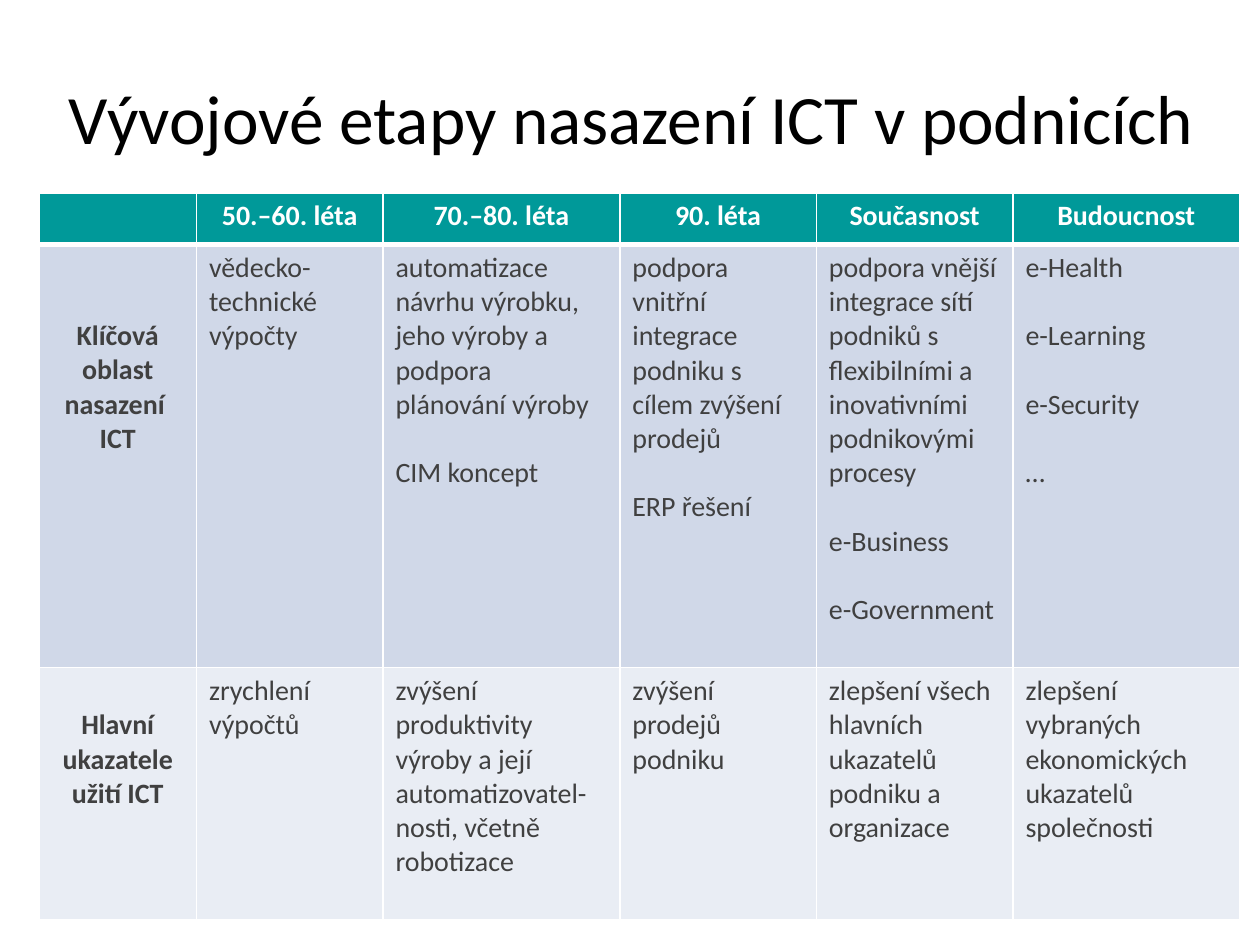
from dataclasses import dataclass

from lxml import etree
from pptx import Presentation
from pptx import util as u
from pptx.dml.color import RGBColor
from pptx.enum import text
from pptx.oxml.ns import qn


@dataclass(frozen=True)
class Theme:
    font: str = "Calibri"
    title_size: float = 39.6
    table_size: float = 16
    line_height: float = 19.5
    title_color: str = "000000"
    header_color: str = "FFFFFF"
    body_color: str = "404040"
    header_fill: str = "009999"
    row_fills: tuple = ("D0D8E8", "E9EDF4")
    border_color: str = "FFFFFF"


THEME = Theme()
SLIDE_SIZE = (10, 7.5)
TITLE_BOX = (0.35, 0.3, 9.45, 1.25)
TABLE_BOX = (0.31, 1.53, 9.53, 5.77)
COLUMN_WEIGHTS = (1.25, 1.48, 1.88, 1.56, 1.56, 1.8)
ROW_WEIGHTS = (0.41, 3.36, 2)

TITLE = "Vývojové etapy nasazení ICT v podnicích "
HEADERS = ("", "50.–60. léta", "70.–80. léta", "90. léta", "Současnost", "Budoucnost")
# Each row: lines left free above the label, label paragraphs, cells of paragraphs.
ROWS = (
    (2, ("Klíčová oblast", "nasazení \vICT"), (
        ("vědecko-technické výpočty",),
        ("automatizace návrhu výrobku, jeho výroby a podpora plánování výroby",
         "CIM koncept"),
        ("podpora vnitřní integrace podniku s cílem zvýšení prodejů", "ERP řešení"),
        ("podpora vnější integrace sítí podniků s flexibilními a inovativními "
         "podnikovými procesy", "e-Business", "e-Government"),
        ("e-Health", "e-Learning", "e-Security", "…"),
    )),
    (1, ("Hlavní ukazatele užití ICT",), (
        ("zrychlení výpočtů",),
        ("zvýšení produktivity výroby a její automatizovatel-nosti, včetně robotizace",),
        ("zvýšení prodejů podniku",),
        ("zlepšení všech hlavních ukazatelů podniku a organizace",),
        ("zlepšení vybraných ekonomických ukazatelů společnosti",),
    )),
)


def write(frame, paragraphs, size, color, bold=False, centered=False, gap=0):
    """Fill a text frame, leaving gap points between paragraphs."""
    frame.word_wrap = True
    for index, wording in enumerate(paragraphs):
        paragraph = frame.paragraphs[0] if index == 0 else frame.add_paragraph()
        paragraph.text = wording
        paragraph.alignment = text.PP_ALIGN.CENTER if centered else text.PP_ALIGN.LEFT
        if index and gap:
            paragraph.space_before = u.Pt(gap)
        font = paragraph.font
        font.name, font.size, font.bold = THEME.font, u.Pt(size), bold
        font.color.rgb = RGBColor.from_string(color)


def style_cell(cell, fill, bottom_width=1):
    properties = cell._tc.get_or_add_tcPr()
    widths = {"a:lnL": 1, "a:lnR": 1, "a:lnT": 1, "a:lnB": bottom_width}
    for side, width in widths.items():
        line = etree.SubElement(properties, qn(side), w=str(u.Pt(width)))
        solid = etree.SubElement(line, qn("a:solidFill"))
        etree.SubElement(solid, qn("a:srgbClr"), val=THEME.border_color)
    cell.fill.solid()
    cell.fill.fore_color.rgb = RGBColor.from_string(fill)


def add_title(slide, box):
    frame = slide.shapes.add_textbox(*map(u.Inches, box)).text_frame
    frame.vertical_anchor = text.MSO_ANCHOR.MIDDLE
    write(frame, [TITLE], THEME.title_size, THEME.title_color, centered=True)


def add_stage_table(slide, box):
    shape = slide.shapes.add_table(len(ROW_WEIGHTS), len(COLUMN_WEIGHTS),
                                   *map(u.Inches, box))
    table = shape.table
    for column, weight in zip(table.columns, COLUMN_WEIGHTS):
        column.width = u.Inches(box[2] * weight / sum(COLUMN_WEIGHTS))
    for row, weight in zip(table.rows, ROW_WEIGHTS):
        row.height = u.Inches(box[3] * weight / sum(ROW_WEIGHTS))

    for cell, header in zip(table.rows[0].cells, HEADERS):
        style_cell(cell, THEME.header_fill, bottom_width=3)
        write(cell.text_frame, [header], THEME.table_size, THEME.header_color,
              bold=True, centered=True)

    for row_index, (free_lines, label, stages) in enumerate(ROWS, start=1):
        for column, paragraphs in enumerate((label, *stages)):
            cell = table.cell(row_index, column)
            style_cell(cell, THEME.row_fills[row_index - 1])
            is_label = column == 0
            if is_label:
                cell.margin_top += u.Pt(free_lines * THEME.line_height)
            write(cell.text_frame, paragraphs, THEME.table_size, THEME.body_color,
                  bold=is_label, centered=is_label,
                  gap=0 if is_label else THEME.line_height)


def main():
    presentation = Presentation()
    presentation.slide_width, presentation.slide_height = map(u.Inches, SLIDE_SIZE)
    slide = presentation.slides.add_slide(presentation.slide_layouts[6])
    add_title(slide, TITLE_BOX)
    add_stage_table(slide, TABLE_BOX)
    presentation.save("out.pptx")


if __name__ == "__main__":
    main()
